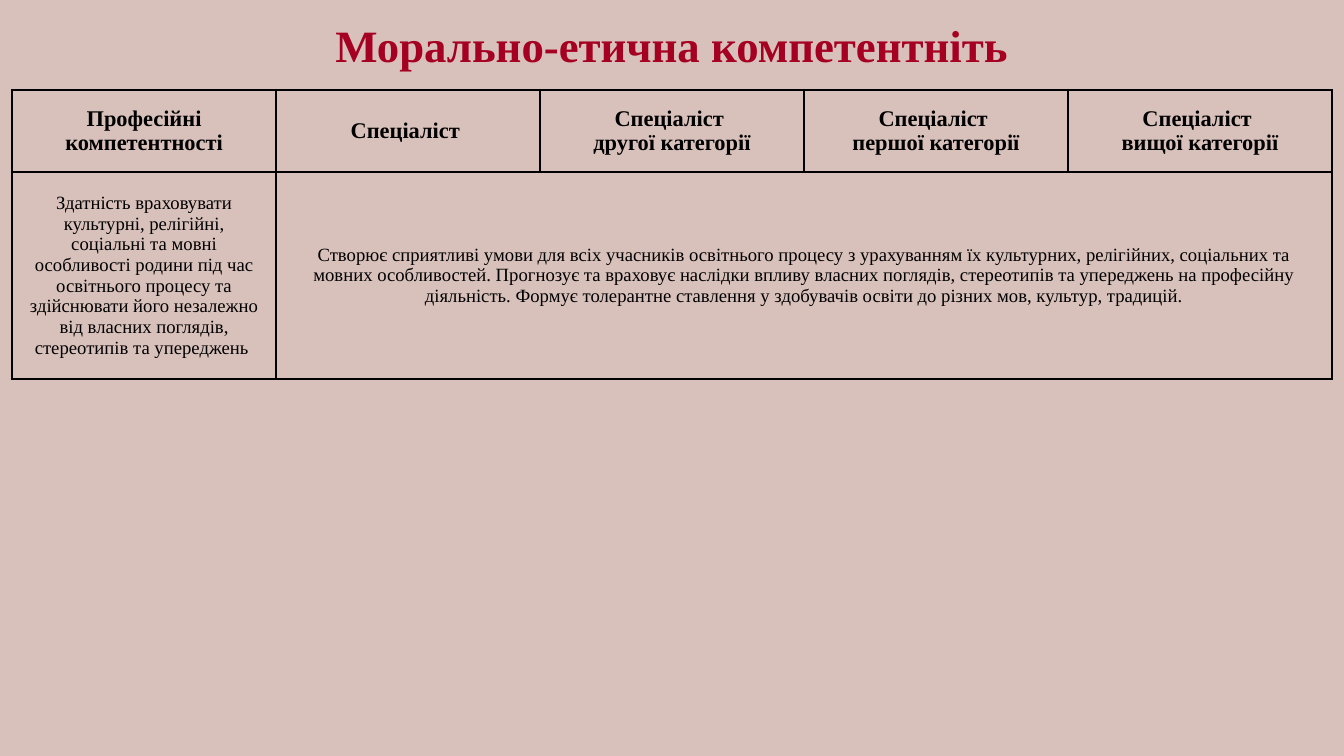
from dataclasses import dataclass

from lxml.etree import SubElement
from pptx import Presentation
from pptx.dml.color import RGBColor
from pptx.enum.text import MSO_ANCHOR, MSO_AUTO_SIZE, PP_ALIGN
from pptx.oxml.ns import qn
from pptx.util import Inches, Pt


@dataclass(frozen=True)
class Theme:
    font: str = "Times New Roman"
    background: str = "D9C1BB"
    title: str = "A50021"
    ink: str = "000000"
    title_size: int = 48
    header_size: int = 24
    body_size: int = 20
    border: int = 3
    padding: float = 0.21


HEADERS = [
    "Професійні компетентності",
    "Спеціаліст ",
    "Спеціаліст \nдругої категорії",
    "Спеціаліст \nпершої категорії",
    "Спеціаліст \nвищої категорії",
]
COMPETENCE = (
    "Здатність враховувати культурні, релігійні, соціальні та мовні "
    "особливості родини під час освітнього процесу та здійснювати його "
    "незалежно від власних поглядів, стереотипів та упереджень "
)
DESCRIPTION = (
    "Створює сприятливі умови для всіх учасників освітнього процесу з "
    "урахуванням їх культурних, релігійних, соціальних та мовних особливостей. "
    "Прогнозує та враховує наслідки впливу власних поглядів, стереотипів та "
    "упереджень на професійну діяльність. Формує толерантне ставлення у "
    "здобувачів освіти до різних мов, культур, традицій."
)


def write_text(tf, text, *, font, size, color, bold=False, spacing=None):
    tf.word_wrap = True
    for i, line in enumerate(text.split("\n")):
        p = tf.paragraphs[0] if i == 0 else tf.add_paragraph()
        p.alignment = PP_ALIGN.CENTER
        if spacing:
            p.line_spacing = spacing
        r = p.add_run()
        r.text = line
        r.font.name = font
        r.font.size = Pt(size)
        r.font.bold = bold
        r.font.color.rgb = RGBColor.from_string(color)


class SlideBuilder:
    def __init__(self, slide, theme):
        self.s = slide
        self.theme = theme
        fill = slide.background.fill
        fill.solid()
        fill.fore_color.rgb = RGBColor.from_string(theme.background)

    def title(self, text, left, top, width, height):
        t = self.theme
        sp = self.s.shapes.add_textbox(
            Inches(left), Inches(top), Inches(width), Inches(height))
        tf = sp.text_frame
        tf.margin_left = tf.margin_right = tf.margin_top = tf.margin_bottom = 0
        write_text(tf, text, font=t.font, size=t.title_size, color=t.title,
                   bold=True, spacing=1.1)
        tf.auto_size = MSO_AUTO_SIZE.SHAPE_TO_FIT_TEXT

    def borders(self, cell):
        tc_pr = cell._tc.get_or_add_tcPr()
        for side in ("a:lnL", "a:lnR", "a:lnT", "a:lnB"):
            ln = SubElement(tc_pr, qn(side), w=str(Pt(self.theme.border)))
            fill = SubElement(ln, qn("a:solidFill"))
            SubElement(fill, qn("a:srgbClr"), val=self.theme.ink)

    def cell(self, cell, text, size, bold):
        t = self.theme
        pad = Inches(t.padding)
        cell.margin_left = cell.margin_right = pad
        cell.margin_top = cell.margin_bottom = pad
        cell.vertical_anchor = MSO_ANCHOR.MIDDLE
        write_text(cell.text_frame, text, font=t.font, size=size,
                   color=t.ink, bold=bold)

    def table(self, headers, body, left, top, width, row_heights):
        t = self.theme
        table = self.s.shapes.add_table(
            len(row_heights), len(headers), Inches(left), Inches(top),
            Inches(width), Inches(sum(row_heights))).table
        table.first_row = table.horz_banding = False
        for row, height in zip(table.rows, row_heights):
            row.height = Inches(height)
        for cell in table.iter_cells():
            self.borders(cell)
            cell.fill.background()
        for col, text in enumerate(headers):
            self.cell(table.cell(0, col), text, t.header_size, True)
        table.cell(1, 1).merge(table.cell(1, len(headers) - 1))
        for col, text in enumerate(body):
            self.cell(table.cell(1, col), text, t.body_size, False)


def main():
    prs = Presentation()
    prs.slide_width, prs.slide_height = Inches(20), Inches(11.25)
    s = prs.slides.add_slide(prs.slide_layouts[6])
    builder = SlideBuilder(s, Theme())
    builder.table(HEADERS, [COMPETENCE, DESCRIPTION],
                  0.18, 1.34, 19.64, [1.22, 3.08])
    builder.title("Морально-етична компетентніть", 1.12, 0.18, 17.75, 0.89)
    prs.save("out.pptx")


if __name__ == "__main__":
    main()
